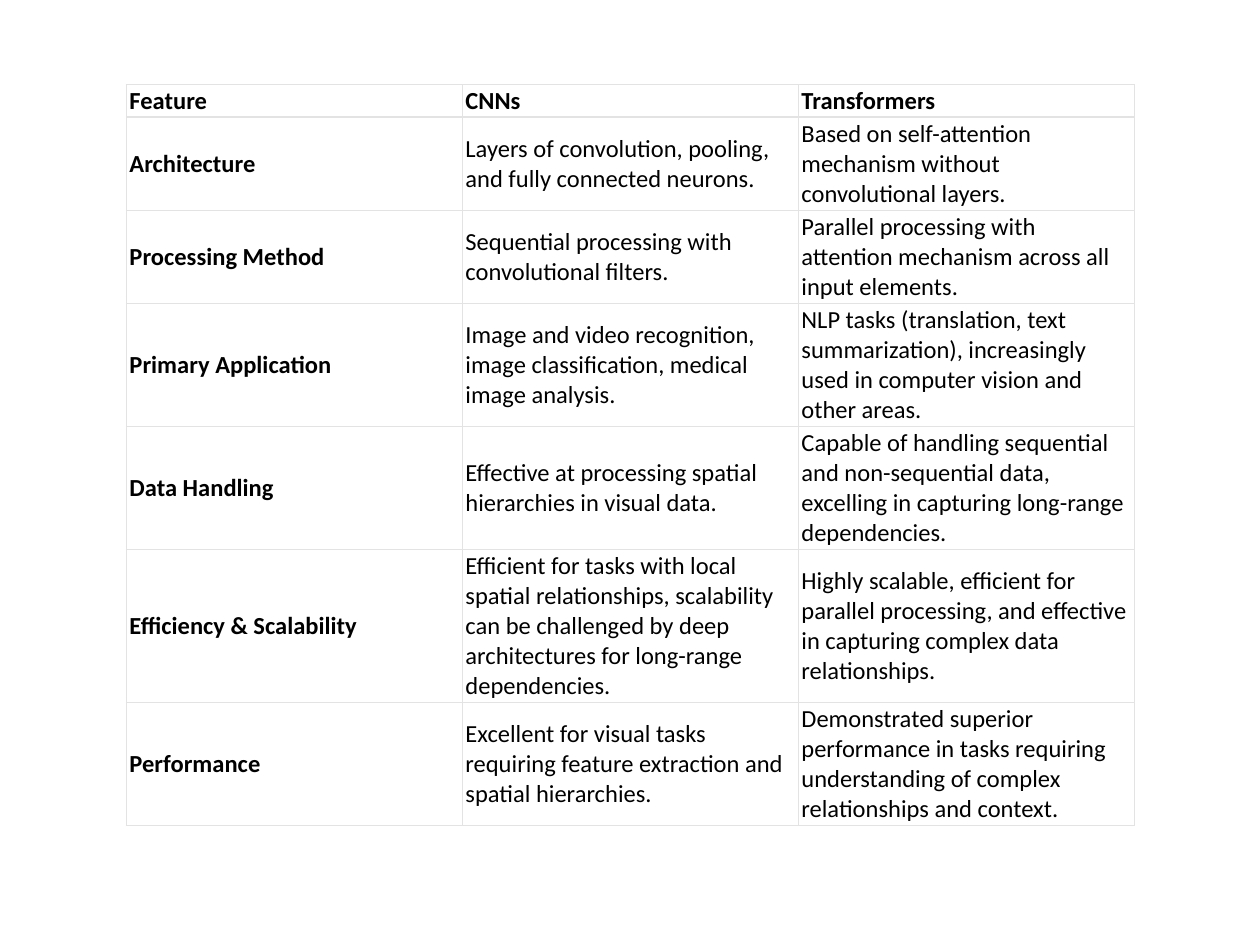
from dataclasses import dataclass

from lxml import etree
from pptx import Presentation
from pptx.dml.color import RGBColor
from pptx.enum.text import MSO_ANCHOR
from pptx.oxml.ns import qn
from pptx.util import Cm, Pt

MIDDLE = MSO_ANCHOR.MIDDLE
BOTTOM = MSO_ANCHOR.BOTTOM
COLORS = {"text": "000000", "cell": "FFFFFF", "border": "E3E3E3"}
FONT_NAME = "Calibri"
FONT_SIZE = Pt(14)
THIN = Pt(0.38)
THICK = Pt(1)
COLUMN_COUNT = 3
TABLE_LEFT = 2.54
TABLE_TOP = 1.7
TABLE_WIDTH = 20.32


@dataclass
class FeatureRow:
    height: float
    feature: str
    cnns: str
    transformers: str


ROWS = [
    FeatureRow(0.66, "Feature", "CNNs", "Transformers"),
    FeatureRow(
        1.88,
        "Architecture",
        "Layers of convolution, pooling, and fully connected neurons.",
        "Based on self-attention mechanism without convolutional layers.",
    ),
    FeatureRow(
        1.88,
        "Processing Method",
        "Sequential processing with convolutional filters.",
        "Parallel processing with attention mechanism across all input elements.",
    ),
    FeatureRow(
        2.48,
        "Primary Application",
        "Image and video recognition, image classification, medical image analysis.",
        "NLP tasks (translation, text summarization), increasingly used in "
        "computer vision and other areas.",
    ),
    FeatureRow(
        2.48,
        "Data Handling",
        "Effective at processing spatial hierarchies in visual data.",
        "Capable of handling sequential and non-sequential data, excelling in "
        "capturing long-range dependencies.",
    ),
    FeatureRow(
        3.08,
        "Efficiency & Scalability",
        "Efficient for tasks with local spatial relationships, scalability can be "
        "challenged by deep architectures for long-range dependencies.",
        "Highly scalable, efficient for parallel processing, and effective in "
        "capturing complex data relationships.",
    ),
    FeatureRow(
        2.48,
        "Performance",
        "Excellent for visual tasks requiring feature extraction and spatial hierarchies.",
        "Demonstrated superior performance in tasks requiring understanding of "
        "complex relationships and context.",
    ),
]


def set_borders(cell, top: int, bottom: int) -> None:
    properties = cell._tc.get_or_add_tcPr()
    widths = {"a:lnL": THIN, "a:lnR": THIN, "a:lnT": top, "a:lnB": bottom}
    for tag, width in widths.items():
        line = etree.SubElement(properties, qn(tag), w=str(int(width)))
        fill = etree.SubElement(line, qn("a:solidFill"))
        etree.SubElement(fill, qn("a:srgbClr"), val=COLORS["border"])


def fill_cell(cell, text: str, bold: bool, anchor: MSO_ANCHOR) -> None:
    cell.fill.solid()
    cell.fill.fore_color.rgb = RGBColor.from_string(COLORS["cell"])
    cell.margin_left = cell.margin_right = Cm(0.07)
    cell.margin_top = cell.margin_bottom = Cm(0.03)
    cell.vertical_anchor = anchor
    cell.text = text
    font = cell.text_frame.paragraphs[0].font
    font.name = FONT_NAME
    font.size = FONT_SIZE
    font.bold = bold
    font.color.rgb = RGBColor.from_string(COLORS["text"])


def add_comparison_table(page, rows: list[FeatureRow]) -> None:
    height = sum(row.height for row in rows)
    table = page.shapes.add_table(
        len(rows), COLUMN_COUNT,
        Cm(TABLE_LEFT), Cm(TABLE_TOP), Cm(TABLE_WIDTH), Cm(height),
    ).table
    table.first_row = False
    table.horz_banding = False
    last = len(rows) - 1
    for row_index, row in enumerate(rows):
        table.rows[row_index].height = Cm(row.height)
        is_header = row_index == 0
        top = THIN if is_header else THICK
        bottom = THIN if row_index == last else THICK
        anchor = BOTTOM if is_header else MIDDLE
        texts = (row.feature, row.cnns, row.transformers)
        for column_index, text in enumerate(texts):
            cell = table.cell(row_index, column_index)
            set_borders(cell, top, bottom)
            fill_cell(cell, text, is_header or column_index == 0, anchor)


def main() -> None:
    deck = Presentation()
    deck.slide_width = Cm(25.4)
    deck.slide_height = Cm(19.05)
    page = deck.slides.add_slide(deck.slide_layouts[6])
    add_comparison_table(page, ROWS)
    deck.save("out.pptx")


if __name__ == "__main__":
    main()
